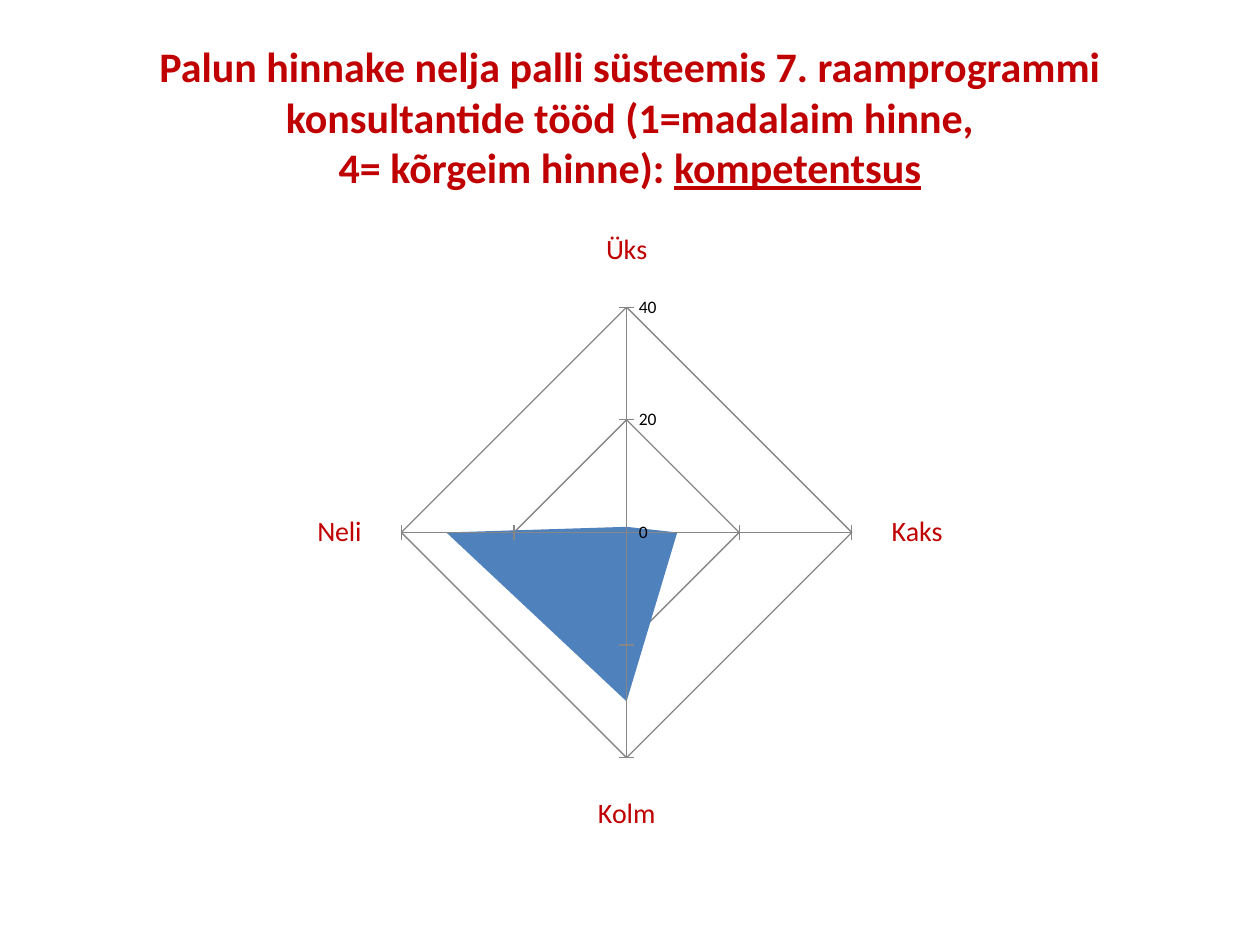
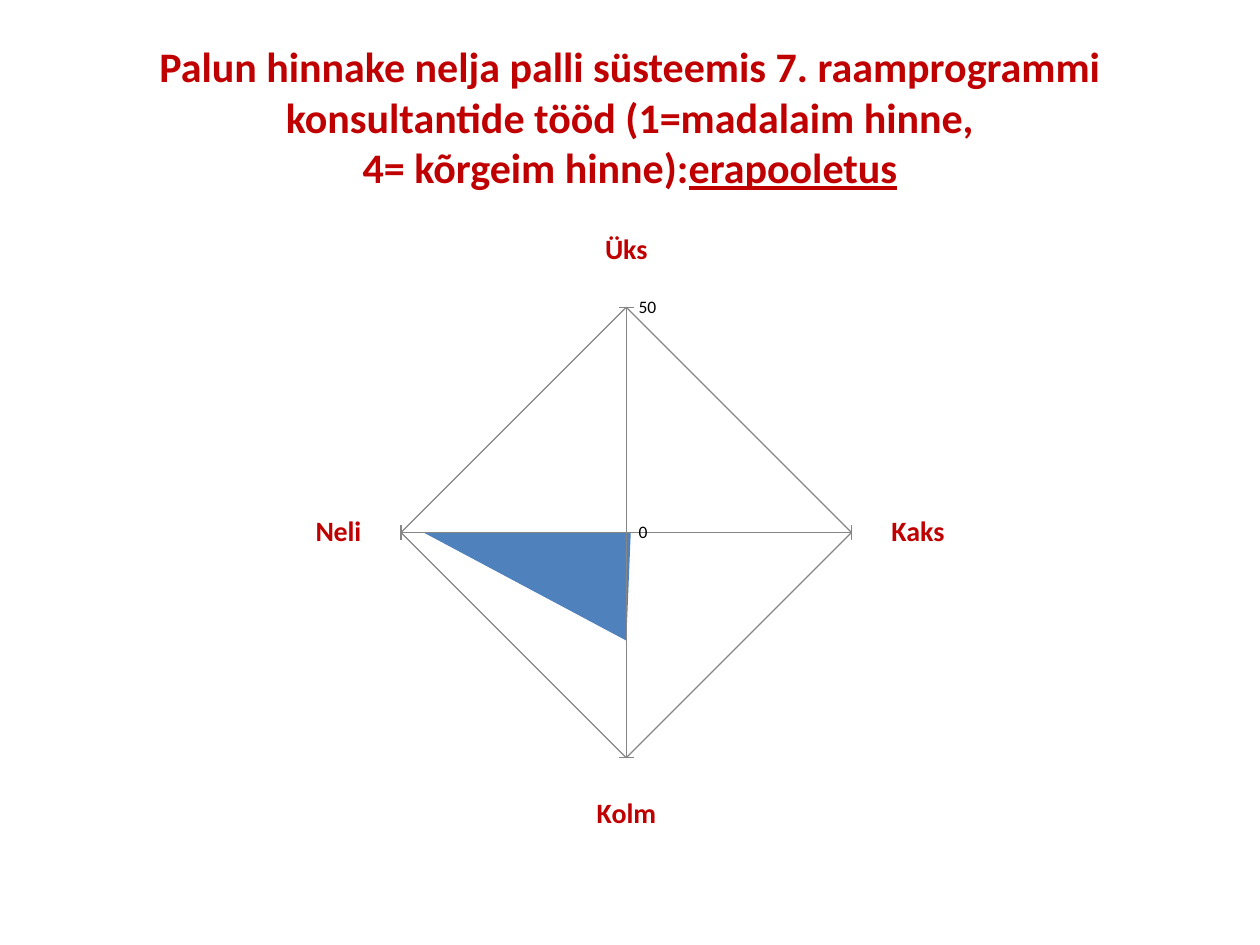
"""Build two slides with radar charts of the consultants' ratings."""
from pptx import Presentation
from pptx.chart.data import CategoryChartData
from pptx.dml.color import RGBColor
from pptx.enum.chart import XL_CHART_TYPE, XL_TICK_MARK
from pptx.enum.text import MSO_ANCHOR, PP_ALIGN
from pptx.util import Cm, Pt

RED = RGBColor(0xC0, 0x00, 0x00)
BLUE = RGBColor(0x4F, 0x81, 0xBD)
GREY = RGBColor(0x86, 0x86, 0x86)
BLACK = RGBColor(0x00, 0x00, 0x00)
FONT = "Calibri"

QUESTION = (
    "Palun hinnake nelja palli süsteemis 7. raamprogrammi "
    "konsultantide tööd (1=madalaim hinne,\v4= kõrgeim hinne):"
)
GRADES = ["Üks", "Kaks", "Kolm", "Neli"]
RATINGS = [
    {"lead": QUESTION + " ", "quality": "kompetentsus", "votes": [1, 9, 30, 32],
     "maximum": 40, "step": 20, "bold_grades": False},
    {"lead": QUESTION, "quality": "erapooletus", "votes": [0, 1, 24, 45],
     "maximum": 50, "step": 50, "bold_grades": True},
]

SLIDE_WIDTH, SLIDE_HEIGHT = Cm(25.4), Cm(19.05)
MARGIN = Cm(1.27)
CONTENT_WIDTH = SLIDE_WIDTH - 2 * MARGIN
TITLE_TOP, TITLE_HEIGHT = Cm(0.76), Cm(3.18)
CHART_TOP, CHART_HEIGHT = Cm(4.45), Cm(12.57)


def style_font(font, size, color, bold=False):
    font.name = FONT
    font.size = Pt(size)
    font.color.rgb = color
    font.bold = bold


def style_line(line):
    line.color.rgb = GREY
    line.width = Pt(0.75)


def add_title(slide, lead, quality):
    title = slide.shapes.add_textbox(MARGIN, TITLE_TOP, CONTENT_WIDTH, TITLE_HEIGHT)
    text_frame = title.text_frame
    text_frame.word_wrap = True
    text_frame.vertical_anchor = MSO_ANCHOR.MIDDLE
    text_frame.text = lead
    paragraph = text_frame.paragraphs[0]
    paragraph.alignment = PP_ALIGN.CENTER
    quality_run = paragraph.add_run()
    quality_run.text = quality
    quality_run.font.underline = True
    for run in paragraph.runs:
        style_font(run.font, 24, RED, bold=True)


def add_radar(slide, votes, maximum, step, bold_grades):
    chart_data = CategoryChartData()
    chart_data.categories = GRADES
    chart_data.add_series("Series 1", votes)
    chart = slide.shapes.add_chart(
        XL_CHART_TYPE.RADAR_FILLED, MARGIN, CHART_TOP, CONTENT_WIDTH, CHART_HEIGHT, chart_data
    ).chart
    chart.has_title = False
    chart.has_legend = False
    style_font(chart.font, 10, BLACK)

    fill = chart.plots[0].series[0].format.fill
    fill.solid()
    fill.fore_color.rgb = BLUE

    grade_axis = chart.category_axis
    grade_axis.has_major_gridlines = True
    grade_axis.major_tick_mark = XL_TICK_MARK.NONE
    grade_axis.format.line.fill.background()
    style_font(grade_axis.tick_labels.font, 16, RED, bold_grades)

    vote_axis = chart.value_axis
    vote_axis.minimum_scale = 0
    vote_axis.maximum_scale = maximum
    vote_axis.major_unit = step
    vote_axis.major_tick_mark = XL_TICK_MARK.OUTSIDE
    vote_axis.has_major_gridlines = True
    for line in (grade_axis.major_gridlines.format.line,
                 vote_axis.major_gridlines.format.line, vote_axis.format.line):
        style_line(line)


def main():
    presentation = Presentation()
    presentation.slide_width = SLIDE_WIDTH
    presentation.slide_height = SLIDE_HEIGHT
    for rating in RATINGS:
        slide = presentation.slides.add_slide(presentation.slide_layouts[6])
        add_title(slide, rating["lead"], rating["quality"])
        add_radar(slide, rating["votes"], rating["maximum"], rating["step"],
                  rating["bold_grades"])
    presentation.save("out.pptx")


if __name__ == "__main__":
    main()
